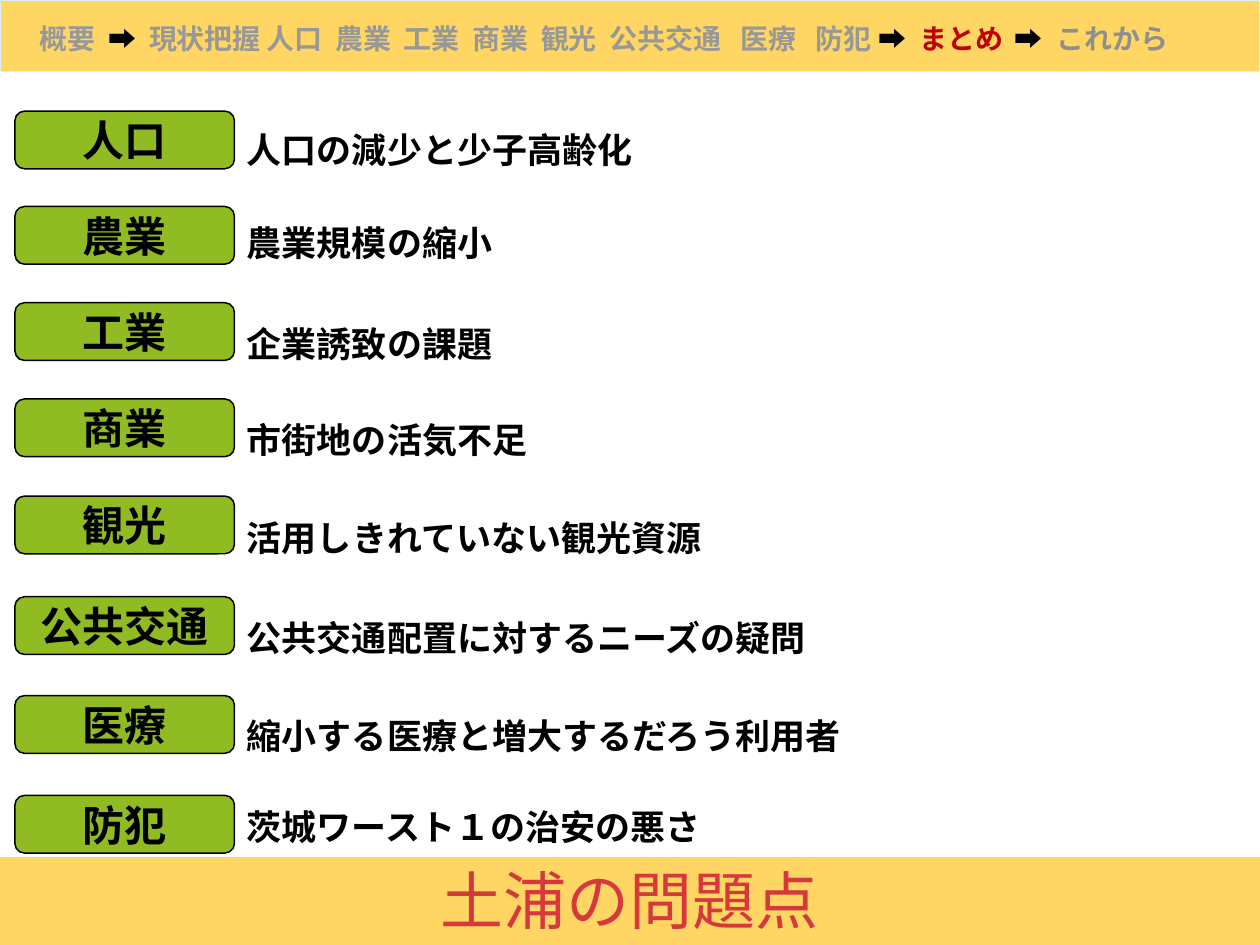
import pptx
import pptx.dml.color
import pptx.enum.shapes
import pptx.enum.text
import pptx.oxml.ns
import pptx.util
from dataclasses import dataclass
from lxml import etree

Pt = pptx.util.Pt
ALIGN = pptx.enum.text.PP_ALIGN
ANCHOR = pptx.enum.text.MSO_ANCHOR
SHAPE = pptx.enum.shapes.MSO_SHAPE


@dataclass(frozen=True)
class Theme:
    font: str = "Calibri"
    band: str = "FFD663"
    band_edge: str = "D9F1F6"
    chip: str = "90BB23"
    ink: str = "000000"
    muted: str = "989898"
    upcoming: str = "8F8F8F"
    current: str = "C00000"
    title: str = "D5393D"
    nav_size: int = 16
    chip_size: int = 24
    issue_size: int = 20
    title_size: int = 36
    line: float = 0.85


THEME = Theme()

# Navigation: label, colour, tab position from the text start
NAV = [
    ("概要", THEME.muted, 0),
    ("➡", THEME.ink, 39.2),
    ("現状把握", THEME.muted, 62.3),
    ("人口", THEME.muted, 129.7),
    ("農業", THEME.muted, 169),
    ("工業", THEME.muted, 208),
    ("商業", THEME.muted, 247.2),
    ("観光", THEME.muted, 286.3),
    ("公共交通", THEME.muted, 325.5),
    ("医療", THEME.muted, 400.4),
    ("防犯", THEME.muted, 443),
    ("➡", THEME.ink, 479),
    ("まとめ", THEME.current, 502.5),
    ("➡", THEME.ink, 557),
    ("これから", THEME.upcoming, 581),
]

# Field, chip top, issue, issue top, issue width
ISSUES = [
    ("人口", 63.5, "人口の減少と少子高齢化", 70, 354),
    ("農業", 118, "農業規模の縮小", 123, 354),
    ("工業", 173, "企業誘致の課題", 180.5, 354),
    ("商業", 228, "市街地の活気不足", 235.5, 354),
    ("観光", 283.5, "活用しきれていない観光資源", 291.5, 389),
    ("公共交通", 341, "公共交通配置に対するニーズの疑問", 348.5, 354),
    ("医療", 397.5, "縮小する医療と増大するだろう利用者", 404.5, 443.5),
    ("防犯", 454.5, "茨城ワースト１の治安の悪さ", 457, 443.5),
]


def rgb(value):
    return pptx.dml.color.RGBColor.from_string(value)


def add_run(p, text, size, color=THEME.ink, bold=True):
    r = p.add_run()
    r.text = text
    r.font.name = THEME.font
    r.font.size = Pt(size)
    r.font.bold = bold
    r.font.color.rgb = rgb(color)


def add_box(s, kind, x, y, w, h, fill, line):
    sp = s.shapes.add_shape(kind, Pt(x), Pt(y), Pt(w), Pt(h))
    sp.shadow.inherit = False
    sp.fill.solid()
    sp.fill.fore_color.rgb = rgb(fill)
    sp.line.color.rgb = rgb(line)
    sp.line.width = Pt(THEME.line)
    return sp


def add_frame(s, x, y, w, h, anchor=ANCHOR.TOP):
    tf = s.shapes.add_textbox(Pt(x), Pt(y), Pt(w), Pt(h)).text_frame
    tf.word_wrap = True
    tf.vertical_anchor = anchor
    return tf


def add_label(s, text, x, y, w, h, align=ALIGN.LEFT, **style):
    p = add_frame(s, x, y, w, h).paragraphs[0]
    p.alignment = align
    add_run(p, text, **style)


def add_chip(s, text, y):
    sp = add_box(s, SHAPE.ROUNDED_RECTANGLE, 8.5, y, 125.5, 33,
                 THEME.chip, THEME.ink)
    tf = sp.text_frame
    tf.vertical_anchor = ANCHOR.MIDDLE
    tf.margin_top = tf.margin_bottom = 0
    p = tf.paragraphs[0]
    p.alignment = ALIGN.CENTER
    add_run(p, text, THEME.chip_size)


def add_nav(s):
    p = add_frame(s, 15.8, 0.5, 704, 42.5, ANCHOR.MIDDLE).paragraphs[0]
    qn = pptx.oxml.ns.qn
    tabs = etree.SubElement(p._p.get_or_add_pPr(), qn("a:tabLst"))
    for text, color, pos in NAV:
        if pos:
            etree.SubElement(tabs, qn("a:tab"), pos=str(int(Pt(pos))), algn="l")
            text = "\t" + text
        add_run(p, text, THEME.nav_size, color)


def main():
    prs = pptx.Presentation()
    prs.slide_width, prs.slide_height = Pt(720), Pt(540)
    s = prs.slides.add_slide(prs.slide_layouts[6])

    # Top and bottom bands
    add_box(s, SHAPE.RECTANGLE, 0, 0, 720, 41, THEME.band, THEME.band_edge)
    add_nav(s)
    add_box(s, SHAPE.RECTANGLE, 0, 490, 720, 50, THEME.band, THEME.band)

    # Fields and their issues
    for field, chip_y, issue, issue_y, width in ISSUES:
        add_chip(s, field, chip_y)
        add_label(s, issue, 134, issue_y, width, 31.5, size=THEME.issue_size)

    # Slide title
    add_label(s, "土浦の問題点", -0.5, 489, 720.5, 51, ALIGN.CENTER,
              size=THEME.title_size, color=THEME.title, bold=False)

    prs.save("out.pptx")


if __name__ == "__main__":
    main()
